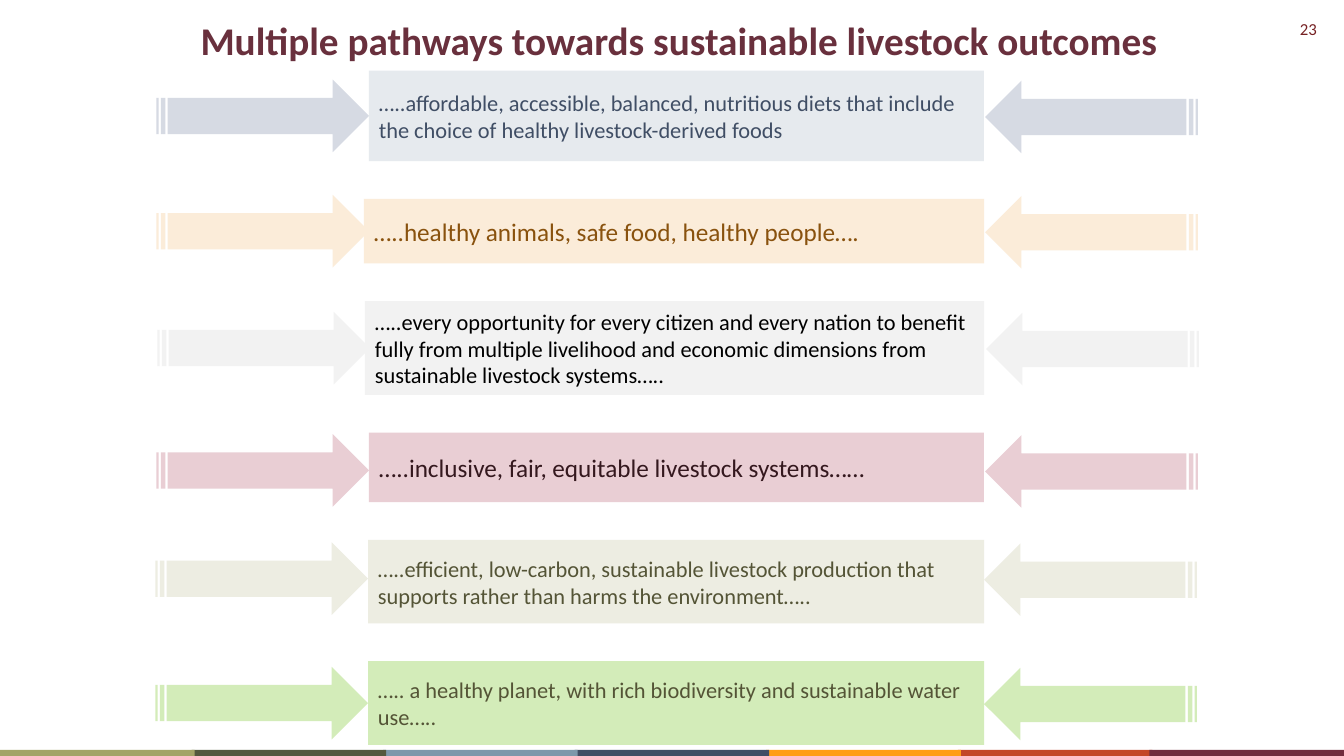
"""Build the slide on pathways towards sustainable livestock outcomes."""
from lxml import etree
from pptx import Presentation
from pptx import util as u
from pptx.dml.color import RGBColor
from pptx.enum import shapes, text
from pptx.oxml.ns import qn

WIDTH, HEIGHT = 13.33, 7.5
TITLE = "Multiple pathways towards sustainable livestock outcomes"
PAGE_NUMBER = "23"

PATHWAYS = [
    dict(words="…..affordable, accessible, balanced, nutritious diets that include "
               "the choice of healthy livestock-derived foods",
         size=16, ink="404E65", fill="E6EAEE", arrow="D6DAE3",
         height=0.9, left=3.66, tail=1.55),
    dict(words="…..healthy animals, safe food, healthy people….",
         size=18, ink="89520E", fill="FBECD9", height=0.64, left=3.61, tail=1.55),
    dict(words="…..every opportunity for every citizen and every nation to benefit "
               "fully from multiple livelihood and economic dimensions from "
               "sustainable livestock systems…..",
         size=16, ink="000000", fill="F2F2F2", height=0.93, left=3.62, tail=1.56),
    dict(words="…..inclusive, fair, equitable livestock systems……",
         size=18, ink="34181E", fill="E9CED4", height=0.69, left=3.66, tail=1.55,
         nudge=0.03),
    dict(words="…..efficient, low-carbon, sustainable livestock production that "
               "supports rather than harms the environment…..",
         size=16, ink="545436", fill="EDEDE2", height=0.83, left=3.65, tail=1.54,
         after=6, nudge=-0.03),
    dict(words="….. a healthy planet, with rich biodiversity and sustainable water use…..",
         size=16, ink="545436", fill="92D050", alpha=40, height=0.83, left=3.65,
         tail=1.54, after=6),
]
STRIPES = [(5, "C34628"), (6, "712C3D"), (4, "FF9E16"), (3, "404E65"),
           (2, "7C98AB"), (1, "53593E"), (0, "A3A467")]
STRIPE_PITCH, STRIPE_WIDTH, STRIPE_HEIGHT = 1.9, 1.93, 0.06

ROWS_TOP, ROWS_BOTTOM, BOX_RIGHT = 0.7, 7.39, 9.76
ARROW_WIDTH, ARROW_HEIGHT, ARROW_PITCH = 2.11, 0.72, 8.22


def colour(code):
    """Turn a hex string into a colour."""
    return RGBColor.from_string(code)


def inches(*lengths):
    """Turn numbers into lengths in inches."""
    return [u.Inches(length) for length in lengths]


def add_block(page, preset, place, fill, alpha=100):
    """Add a flat filled shape without outline."""
    block = page.shapes.add_shape(preset, *inches(*place))
    block.shadow.inherit = False
    block.line.fill.background()
    block.fill.solid()
    block.fill.fore_color.rgb = colour(fill)
    if alpha < 100:
        tone = block.fill._xPr.find(".//" + qn("a:srgbClr"))
        etree.SubElement(tone, qn("a:alpha"), val=str(alpha * 1000))
    return block


def write(box, words, ink, align, anchor, after=0, **font):
    """Put one formatted paragraph into a box."""
    frame = box.text_frame
    frame.word_wrap = True
    frame.vertical_anchor = anchor
    para = frame.paragraphs[0]
    para.alignment = align
    para.space_after = u.Pt(after)
    span = para.add_run()
    span.text = words
    span.font.color.rgb = colour(ink)
    for name, value in dict(name="Calibri", **font).items():
        setattr(span.font, name, value)


def add_pathway(page, row, top):
    """Add a pathway box with an arrow pointing at each side."""
    alpha = row.get("alpha", 100)
    place = (row["left"], top, BOX_RIGHT - row["left"], row["height"])
    box = add_block(page, shapes.MSO_SHAPE.RECTANGLE, place, row["fill"], alpha)
    write(box, row["words"], row["ink"], text.PP_ALIGN.LEFT, text.MSO_ANCHOR.MIDDLE,
          row.get("after", 0), size=u.Pt(row["size"]))
    arrow_top = top + (row["height"] - ARROW_HEIGHT) / 2 + row.get("nudge", 0)
    for side in (0, 1):
        place = (row["tail"] + side * ARROW_PITCH, arrow_top + side * 0.01,
                 ARROW_WIDTH, ARROW_HEIGHT)
        arrow = add_block(page, shapes.MSO_SHAPE.STRIPED_RIGHT_ARROW, place,
                          row.get("arrow", row["fill"]), alpha)
        arrow.rotation = 180 * side


def main():
    """Build and save the deck."""
    deck = Presentation()
    deck.slide_width, deck.slide_height = inches(WIDTH, HEIGHT)
    page = deck.slides.add_slide(deck.slide_layouts[5])

    title = page.shapes.title
    title.left, title.top, title.width, title.height = inches(0.65, 0.11, 12.16, 0.57)
    write(title, TITLE, "69303D", text.PP_ALIGN.CENTER, text.MSO_ANCHOR.TOP,
          size=u.Pt(28), bold=True)

    number = page.shapes.add_textbox(*inches(12.46, 0.14, 0.7, 0.3))
    write(number, PAGE_NUMBER, "762123", text.PP_ALIGN.RIGHT, text.MSO_ANCHOR.TOP,
          size=u.Pt(12))

    for column, fill in STRIPES:
        place = (column * STRIPE_PITCH, HEIGHT - STRIPE_HEIGHT,
                 STRIPE_WIDTH, STRIPE_HEIGHT)
        add_block(page, shapes.MSO_SHAPE.RECTANGLE, place, fill)

    filled = sum(row["height"] for row in PATHWAYS)
    gap = (ROWS_BOTTOM - ROWS_TOP - filled) / (len(PATHWAYS) - 1)
    top = ROWS_TOP
    for row in PATHWAYS:
        add_pathway(page, row, top)
        top += row["height"] + gap

    deck.save("out.pptx")


if __name__ == "__main__":
    main()
